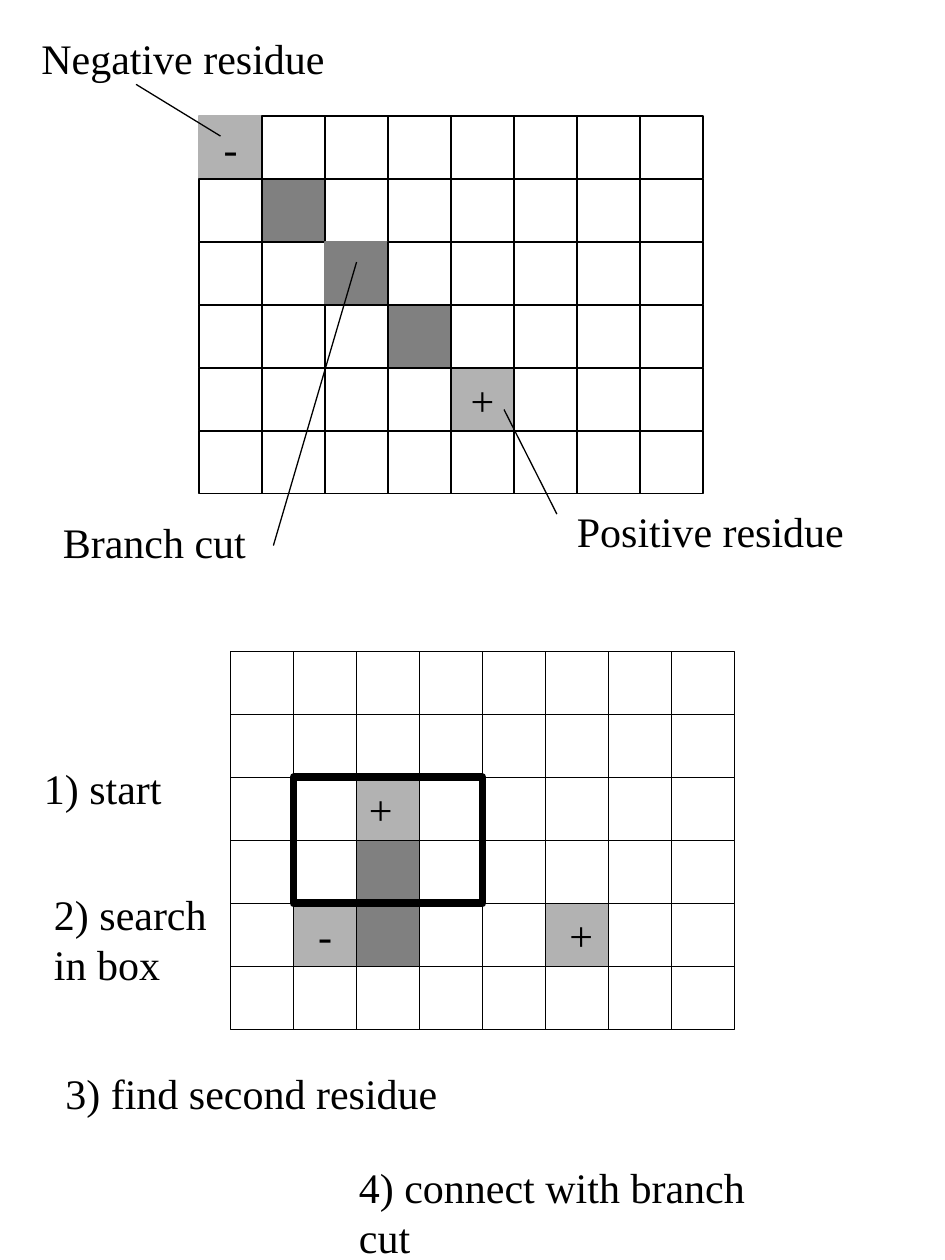
import pptx
import pptx.util
import pptx.dml.color
import pptx.enum.shapes
import pptx.enum.text
import pptx.oxml

Inches, Pt = pptx.util.Inches, pptx.util.Pt
RGB = pptx.dml.color.RGBColor.from_string
RECT = pptx.enum.shapes.MSO_SHAPE.RECTANGLE
LINE = pptx.enum.shapes.MSO_CONNECTOR.STRAIGHT
TEXT = pptx.enum.text

# Content: cells are . white, o open, l light, d dark; capitals have an edge in the fill colour
CUT = {"at": (1.58, 0.92), "signs": {(0, 0): "-", (4, 4): "+"}, "rows": [
    "L.......",
    ".d......",
    "..D.....",
    "...d....",
    "....l...",
    "........",
]}
SEARCH = {"at": (1.83, 5.17), "signs": {(4, 1): "-"}, "rows": [
    "o.......",
    ".o......",
    ".ol.....",
    "..doo...",
    ".ld.ol..",
    "........",
]}
NAMES = [
    ("Positive residue", 4.48, 3.96, 2.32, 0.5),
    ("Negative residue", 0.23, 0.21, 2.45, 0.5),
    ("Branch cut", 0.4, 4.05, 1.65, 0.5),
]
LEADS = [
    (4.42, 4.08, 4, 3.25),
    (1.08, 0.67, 1.75, 1.08),
    (2.17, 4.33, 2.83, 2.08),
]
PLUSES = [
    ("+", 2.83, 6.17, 0.39, 0.5),
    ("+", 4.42, 7.17, 0.39, 0.5),
]
STEPS = [
    ("1) start", 0.25, 6, 1.14, 0.5),
    ("2) search\nin box", 0.33, 7, 1.41, 0.9),
    ("3) find second residue", 0.42, 8.42, 3.15, 0.5),
    ("4) connect with branch cut", 2.75, 9.17, 3.75, 0.5),
]

# Theme
THEME = {
    "ink": RGB("000000"),
    "fills": {".": RGB("FFFFFF"), "l": RGB("B2B2B2"), "d": RGB("808080")},
    "font": {"name": "Times New Roman", "size": Pt(24)},
    "thin": Pt(0.75),
    "bold": Pt(4.5),
    "cell": 0.5,
}
FRAME = {"word_wrap": False}
LABEL = {**FRAME, "auto_size": TEXT.MSO_AUTO_SIZE.SHAPE_TO_FIT_TEXT}
SIGN = {**FRAME, "vertical_anchor": TEXT.MSO_ANCHOR.MIDDLE}


def style(item, values):
    for key, value in values.items():
        setattr(item, key, value)


def write(shape, text, frame, align=None):
    body = shape.text_frame
    body.text = text
    style(body, frame)
    for para in body.paragraphs:
        para.alignment = align
        style(para.font, THEME["font"])
        para.font.color.rgb = THEME["ink"]


def label(shapes, text, *at):
    write(shapes.add_textbox(*map(Inches, at)), text, LABEL)


def box(shapes, at, fill=None, edge=THEME["ink"], width=THEME["thin"]):
    shape = shapes.add_shape(RECT, *map(Inches, at))
    shape.shadow.inherit = False
    if fill is None:
        shape.fill.background()
    else:
        shape.fill.solid()
        shape.fill.fore_color.rgb = fill
    shape.line.color.rgb = edge
    shape.line.width = width
    return shape


def grid(shapes, data):
    left, top = data["at"]
    size = THEME["cell"]
    for row, codes in enumerate(data["rows"]):
        for col, code in enumerate(codes):
            fill = THEME["fills"].get(code.lower())
            edge = fill if code.isupper() else THEME["ink"]
            at = (left + col * size, top + row * size, size, size)
            cell = box(shapes, at, fill, edge)
            if (row, col) in data["signs"]:
                write(cell, data["signs"][row, col], SIGN, TEXT.PP_ALIGN.CENTER)


def lead(shapes, *ends):
    line = shapes.add_connector(LINE, *map(Inches, ends))
    line.line.color.rgb = THEME["ink"]
    line.line.width = THEME["thin"]
    props = line._element.spPr
    props.append(pptx.oxml.parse_xml(
        '<a:effectLst xmlns:a="http://schemas.openxmlformats.org/drawingml/2006/main"/>'))


def main():
    deck = pptx.Presentation()
    style(deck, {"slide_width": Inches(7.5), "slide_height": Inches(10)})
    shapes = deck.slides.add_slide(deck.slide_layouts[6]).shapes

    # Upper grid: residues joined by a branch cut
    grid(shapes.add_group_shape().shapes, CUT)
    for name in NAMES:
        label(shapes, *name)
    for ends in LEADS:
        lead(shapes, *ends)

    # Lower grid: search box around the first residue
    grid(shapes, SEARCH)
    for plus in PLUSES:
        label(shapes, *plus)
    box(shapes, (2.33, 6.17, 1.5, 1), width=THEME["bold"])
    for step in STEPS:
        label(shapes, *step)

    deck.save("out.pptx")


if __name__ == "__main__":
    main()
